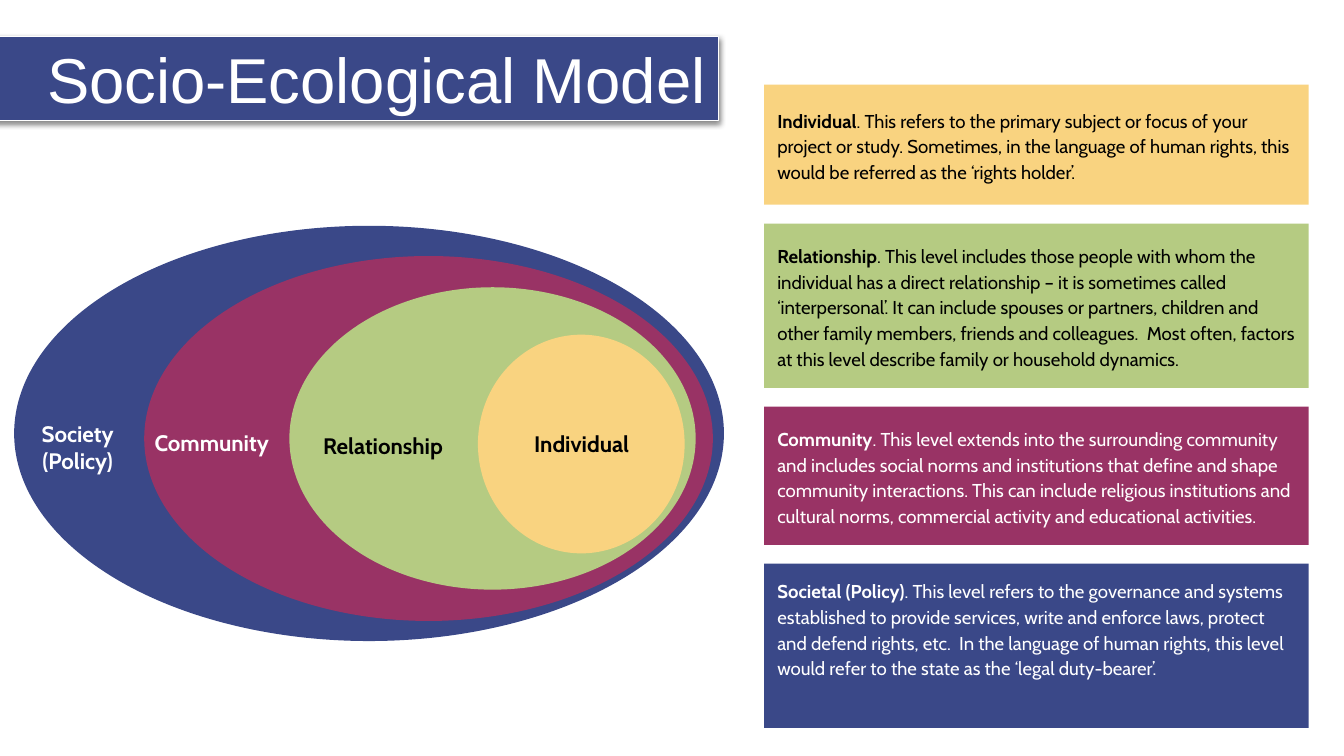
from lxml.etree import SubElement
from pptx import Presentation
from pptx.dml.color import RGBColor
from pptx.enum.shapes import MSO_SHAPE as Preset
from pptx.enum.text import MSO_ANCHOR as Anchor, PP_ALIGN as Align
from pptx.oxml.ns import qn
from pptx.util import Inches, Pt

WIDTH, HEIGHT = Inches(13.33), Inches(7.5)
BLUE, PLUM, GREEN, GOLD = "3A4888", "993365", "B5CB82", "F9D380"
WHITE, BLACK = "FFFFFF", "000000"

# Positions are left, top, width, height in percent of the slide.
TITLE_AREA = (-0.98, 4.8, 54.46, 11.2)

# Ring fill, ring area, label, label area, label colour, label fill
RINGS = [
    (BLUE, (1.05, 29.87, 52.81, 54.93),
     "Society (Policy)", (0, 53.73, 11.55, 10.8), WHITE, None),
    (PLUM, (10.73, 33.87, 42.31, 48.27),
     "Community", (7.58, 54.4, 16.35, 8.4), WHITE, None),
    (GREEN, (21.53, 38, 30.23, 40),
     "Relationship", (21.08, 54.4, 14.85, 9.07), BLACK, None),
    (GOLD, (35.56, 44.27, 15.38, 28.93),
     "Individual", (36.98, 52.67, 12.6, 11.87), BLACK, GOLD),
]

PANEL_LEFT, PANEL_TOP, PANEL_WIDTH, PANEL_GAP = 56.86, 11.2, 40.51, 2.5
# Fill, text colour, height, anchor, space around paragraph, term, description
PANELS = [
    (GOLD, BLACK, 15.87, Anchor.MIDDLE, 16, "Individual",
     ". This refers to the primary subject or focus of your project or study. "
     "Sometimes, in the language of human rights, this would be referred as "
     "the ‘rights holder’."),
    (GREEN, BLACK, 21.73, Anchor.MIDDLE, 0, "Relationship",
     ". This level includes those people with whom the individual has a direct "
     "relationship – it is sometimes called ‘interpersonal’. It can include "
     "spouses or partners, children and other family members, friends and "
     "colleagues.  Most often, factors at this level describe family or "
     "household dynamics."),
    (PLUM, WHITE, 18.27, Anchor.MIDDLE, 16, "Community",
     ". This level extends into the surrounding community and includes social "
     "norms and institutions that define and shape community interactions. "
     "This can include religious institutions and cultural norms, commercial "
     "activity and educational activities."),
    (BLUE, WHITE, 21.73, Anchor.TOP, 0, "Societal (Policy)",
     ". This level refers to the governance and systems established to provide "
     "services, write and enforce laws, protect and defend rights, etc.  In "
     "the language of human rights, this level would refer to the state as "
     "the ‘legal duty-bearer’."),
]


def set_values(target, values):
    for name, value in values.items():
        setattr(target, name, value)


def area(left, top, width, height):
    """Turn percentages of the slide into lengths."""
    return [round(share * side / 100) for share, side in
            zip((left, top, width, height), (WIDTH, HEIGHT) * 2)]


def paint(color_format, color):
    color_format.rgb = RGBColor.from_string(color)


def fill_shape(shape, color):
    shape.fill.solid()
    paint(shape.fill.fore_color, color)


def add_flat_shape(shapes, preset, place, color):
    shape = shapes.add_shape(preset, *area(*place))
    shape.shadow.inherit = False
    fill_shape(shape, color)
    shape.line.fill.background()
    return shape


def write(shape, spans, color, size, font="Cabin", anchor=Anchor.MIDDLE, **para_format):
    """Fill a shape with one paragraph; spans are (text, bold) pairs."""
    inset = Inches(0.13)
    set_values(shape.text_frame, {
        "word_wrap": True, "vertical_anchor": anchor,
        "margin_left": inset, "margin_right": inset,
        "margin_top": inset, "margin_bottom": inset})
    para = shape.text_frame.paragraphs[0]
    set_values(para, para_format)
    for text, bold in spans:
        span = para.add_run()
        span.text = text
        set_values(span.font, {"name": font, "size": Pt(size), "bold": bold})
        paint(span.font.color, color)


def add_soft_shadow(shape):
    effects = SubElement(shape._element.spPr, qn("a:effectLst"))
    shadow = SubElement(effects, qn("a:outerShdw"), blurRad=str(Pt(4.5)),
                        dist=str(Pt(1.5)), dir="5400000", algn="bl", rotWithShape="0")
    tint = SubElement(shadow, qn("a:srgbClr"), val=BLACK)
    SubElement(tint, qn("a:alpha"), val="47000")


def format_title(title):
    set_values(title, dict(zip(("left", "top", "width", "height"), area(*TITLE_AREA))))
    fill_shape(title, BLUE)
    paint(title.line.color, WHITE)
    title.line.width = Pt(0.75)
    add_soft_shadow(title)
    write(title, [("Socio-Ecological Model", False)], WHITE, 45.3, "Arial",
          alignment=Align.RIGHT)


def add_ring(shapes, color, place, label, label_place, label_color, label_fill):
    add_flat_shape(shapes, Preset.OVAL, place, color)
    if label_fill:
        box = add_flat_shape(shapes, Preset.RECTANGLE, label_place, label_fill)
    else:
        box = shapes.add_textbox(*area(*label_place))
    write(box, [(label, True)], label_color, 16, alignment=Align.CENTER)


def add_panel(shapes, top, color, text_color, height, anchor, space, term, description):
    place = (PANEL_LEFT, top, PANEL_WIDTH, height)
    panel = add_flat_shape(shapes, Preset.RECTANGLE, place, color)
    write(panel, [(term, True), (description, False)], text_color, 13.3, anchor=anchor,
          alignment=Align.LEFT, line_spacing=1.15,
          space_before=Pt(space), space_after=Pt(space))


def main():
    deck = Presentation()
    set_values(deck, {"slide_width": WIDTH, "slide_height": HEIGHT})
    page = deck.slides.add_slide(deck.slide_layouts[5])
    format_title(page.shapes.title)

    # Nested levels, outermost first
    diagram = page.shapes.add_group_shape()
    for ring in RINGS:
        add_ring(diagram.shapes, *ring)

    # Explanations, stacked with equal gaps
    top = PANEL_TOP
    for panel in PANELS:
        add_panel(page.shapes, top, *panel)
        top += panel[2] + PANEL_GAP

    deck.save("out.pptx")


if __name__ == "__main__":
    main()
